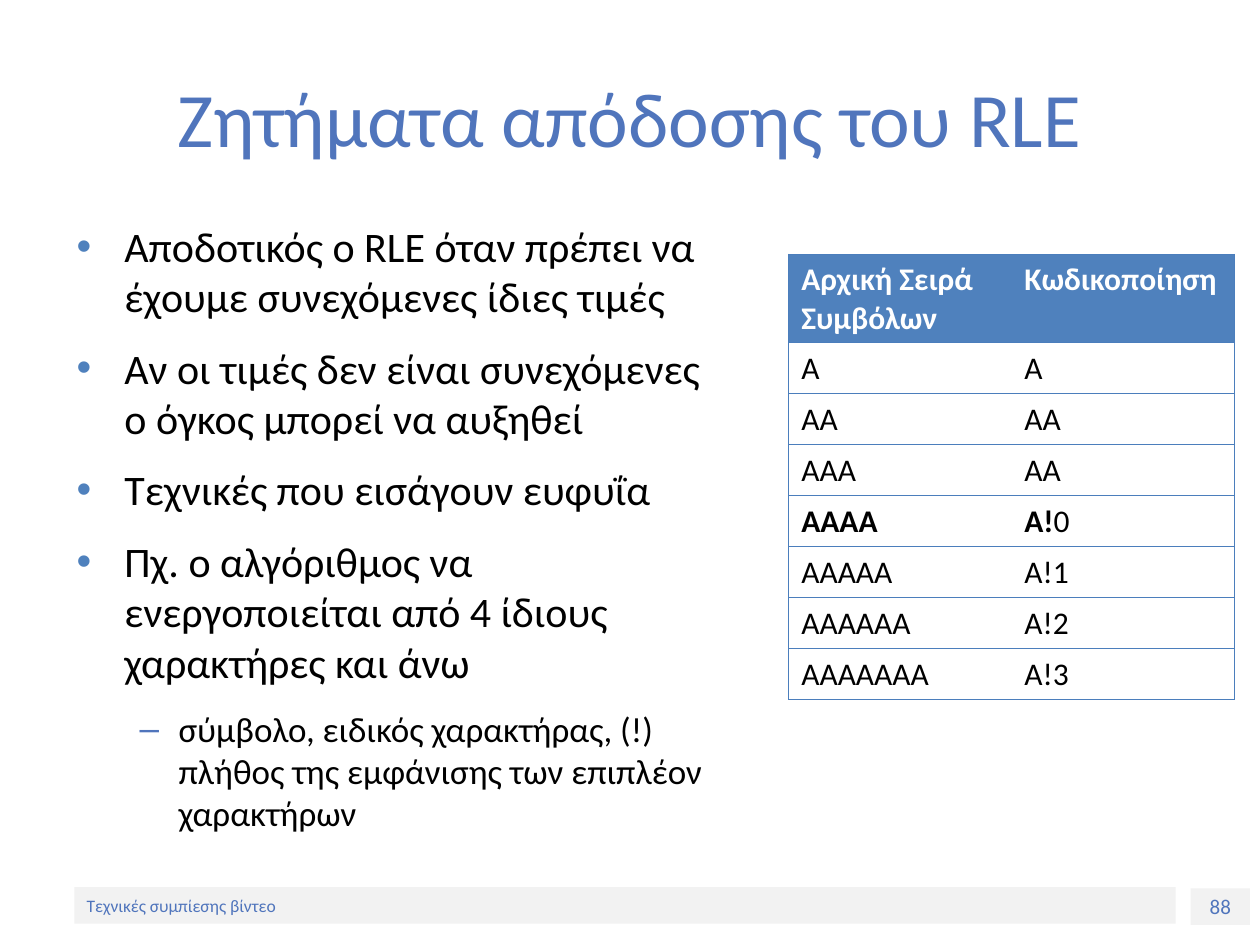
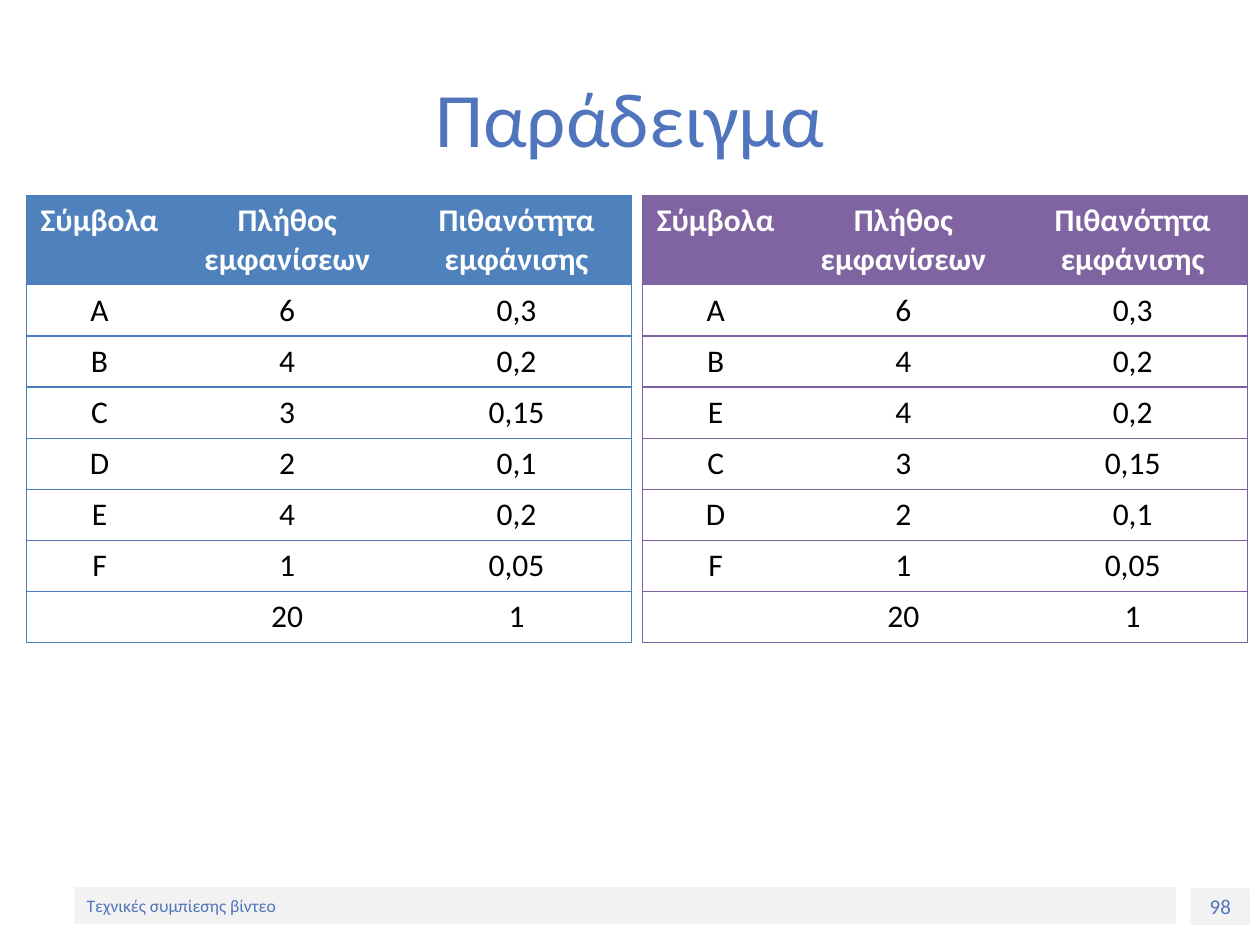
"""Build two slides on run-length coding and symbol frequencies."""
from dataclasses import dataclass

from lxml import etree
from pptx import Presentation
from pptx import util as u
from pptx.dml.color import RGBColor
from pptx.enum import shapes, text
from pptx.oxml import ns

FOOTER = "Τεχνικές συμπίεσης βίντεο"
BULLETS = [
    (0, "Αποδοτικός ο RLE όταν πρέπει να έχουμε συνεχόμενες ίδιες τιμές"),
    (0, "Αν οι τιμές δεν είναι συνεχόμενες ο όγκος μπορεί να αυξηθεί"),
    (0, "Τεχνικές που εισάγουν ευφυΐα"),
    (0, "Πχ. ο αλγόριθμος να ενεργοποιείται από 4 ίδιους χαρακτήρες και άνω"),
    (1, "σύμβολο, ειδικός χαρακτήρας, (!) πλήθος της εμφάνισης των επιπλέον χαρακτήρων"),
]
RLE_ROWS = [
    ("Αρχική Σειρά Συμβόλων", "Κωδικοποίηση"),
    ("Α", "Α"),
    ("ΑΑ", "ΑΑ"),
    ("ΑΑΑ", "ΑΑ"),
    ([("ΑΑΑΑ", True)], [("Α!", True), ("0", False)]),
    ("ΑΑΑΑΑ", "Α!1"),
    ("ΑΑΑΑΑΑ", "Α!2"),
    ("ΑΑΑΑΑΑΑ", "Α!3"),
]
COUNT_HEAD = ("Σύμβολα", "Πλήθος εμφανίσεων", "Πιθανότητα εμφάνισης")
COUNTS = [("Α", "6", "0,3"), ("B", "4", "0,2"), ("C", "3", "0,15"),
          ("D", "2", "0,1"), ("E", "4", "0,2"), ("F", "1", "0,05")]
SORTED_COUNTS = [("Α", "6", "0,3"), ("B", "4", "0,2"), ("Ε", "4", "0,2"),
                 ("C", "3", "0,15"), ("D", "2", "0,1"), ("F", "1", "0,05")]
TOTAL = ("", "20", "1")


@dataclass(frozen=True)
class Theme:
    """Colours, sizes and table looks shared by the slides."""
    font: str = "Calibri"
    accent: str = "5075BC"
    ink: str = "000000"
    white: str = "FFFFFF"
    band: str = "F2F2F2"
    blue: tuple = ("4F81BD", "4B7EBC")
    purple: tuple = ("8064A2", "7D60A0")
    title: int = 44
    table: int = 18
    number: int = 12
    footer: int = 10


T = Theme()
LEVELS = [
    {"size": 24, "char": "•", "color": T.blue[0], "left": 0.38, "hang": 0.38},
    {"size": 20, "char": "–", "color": T.accent, "left": 0.81, "hang": 0.31},
]


def box(left, top, width, height):
    return [u.Inches(v) for v in (left, top, width, height)]


def style(font, size, color, bold=False):
    for name, value in {"name": T.font, "size": u.Pt(size), "bold": bold}.items():
        setattr(font, name, value)
    font.color.rgb = RGBColor.from_string(color)


def add_run(p, words, size, color, bold=False):
    r = p.add_run()
    r.text = words
    style(r.font, size, color, bold)


def add_band(s, place, words, size, align):
    sp = s.shapes.add_shape(shapes.MSO_SHAPE.RECTANGLE, *box(*place))
    sp.shadow.inherit = False
    sp.fill.solid()
    sp.fill.fore_color.rgb = RGBColor.from_string(T.band)
    sp.line.fill.background()
    tf = sp.text_frame
    tf.vertical_anchor = text.MSO_ANCHOR.MIDDLE
    p = tf.paragraphs[0]
    p.alignment = align
    add_run(p, words, size, T.accent)


def add_slide(prs, title, number):
    s = prs.slides.add_slide(prs.slide_layouts[5])
    add_band(s, (9.45, 7.05, 0.47, 0.29), number, T.number, text.PP_ALIGN.CENTER)
    add_band(s, (0.59, 7.04, 8.74, 0.29), FOOTER, T.footer, text.PP_ALIGN.LEFT)
    sp = s.shapes.title
    sp.left, sp.top, sp.width, sp.height = box(0.5, 0.3, 9, 1.25)
    tf = sp.text_frame
    tf.vertical_anchor = text.MSO_ANCHOR.MIDDLE
    p = tf.paragraphs[0]
    p.alignment = text.PP_ALIGN.CENTER
    add_run(p, title, T.title, T.accent)
    return s


def add_bullets(s, place, items):
    tf = s.shapes.add_textbox(*box(*place)).text_frame
    tf.word_wrap = True
    for i, (level, words) in enumerate(items):
        look = LEVELS[level]
        p = tf.paragraphs[0] if i == 0 else tf.add_paragraph()
        p.level = level
        if i:
            p.space_before = u.Pt(12)
        pPr = p._p.get_or_add_pPr()
        pPr.set("marL", str(u.Inches(look["left"])))
        pPr.set("indent", str(-u.Inches(look["hang"])))
        clr = etree.SubElement(pPr, ns.qn("a:buClr"))
        etree.SubElement(clr, ns.qn("a:srgbClr"), val=look["color"])
        etree.SubElement(pPr, ns.qn("a:buFont"), typeface="Arial")
        etree.SubElement(pPr, ns.qn("a:buChar"), char=look["char"])
        add_run(p, words, look["size"], T.ink)


def set_borders(cell, color, first, last):
    sides = {"L": first, "R": last, "T": True, "B": True}
    tcPr = cell._tc.get_or_add_tcPr()
    for side, shown in sides.items():
        ln = etree.SubElement(tcPr, ns.qn(f"a:ln{side}"), w=str(u.Pt(0.75)))
        fill = etree.SubElement(ln, ns.qn("a:solidFill" if shown else "a:noFill"))
        if shown:
            etree.SubElement(fill, ns.qn("a:srgbClr"), val=color)


def add_grid(s, left, top, widths, rows, colors, align):
    head_color, line_color = colors
    heights = [0.7] + [0.405] * (len(rows) - 1)
    place = box(left, top, sum(widths), sum(heights))
    tbl = s.shapes.add_table(len(rows), len(widths), *place).table
    tbl.horz_banding = False
    for column, width in zip(tbl.columns, widths):
        column.width = u.Inches(width)
    for i, row in enumerate(rows):
        tbl.rows[i].height = u.Inches(heights[i])
        head = i == 0
        for j, content in enumerate(row):
            cell = tbl.cell(i, j)
            set_borders(cell, line_color, j == 0, j == len(row) - 1)
            if head:
                cell.fill.solid()
                cell.fill.fore_color.rgb = RGBColor.from_string(head_color)
            else:
                cell.fill.background()
            p = cell.text_frame.paragraphs[0]
            p.alignment = align
            runs = [(content, head)] if isinstance(content, str) else content
            for words, bold in runs:
                if words:
                    add_run(p, words, T.table, T.white if head else T.ink, bold)


def main():
    prs = Presentation()
    prs.slide_width, prs.slide_height = u.Inches(10), u.Inches(7.5)

    s = add_slide(prs, "Ζητήματα απόδοσης του RLE", "88")
    add_bullets(s, (0.51, 1.7, 5.36, 5.28), BULLETS)
    add_grid(s, 6.26, 2.02, [1.77, 1.77], RLE_ROWS, T.blue, text.PP_ALIGN.LEFT)

    s = add_slide(prs, "Παράδειγμα", "98")
    for left, counts, colors in ((0.21, COUNTS, T.blue), (5.1, SORTED_COUNTS, T.purple)):
        add_grid(s, left, 1.55, [1.16, 1.82, 1.82], [COUNT_HEAD, *counts, TOTAL],
                 colors, text.PP_ALIGN.CENTER)

    prs.save("out.pptx")


if __name__ == "__main__":
    main()
